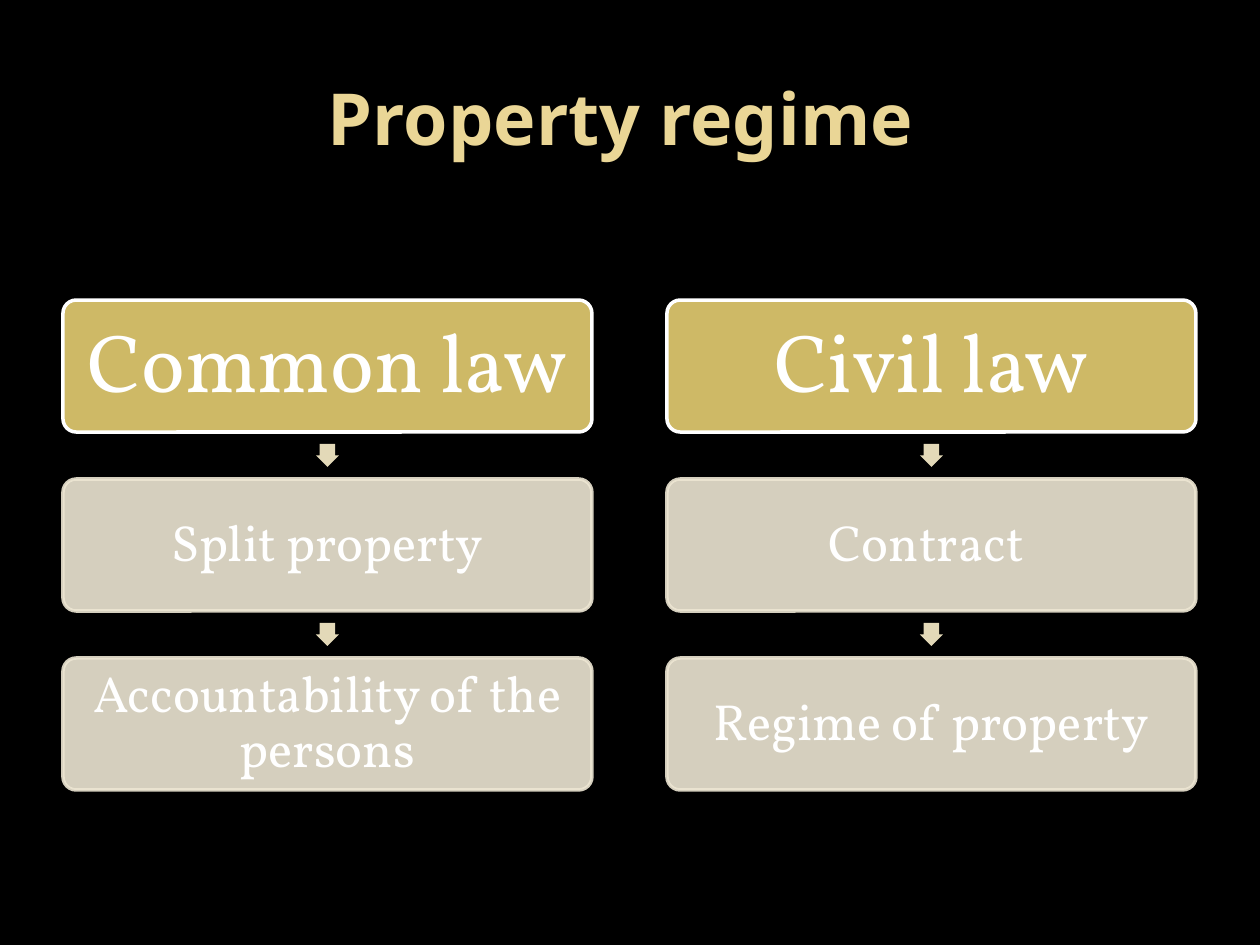
from dataclasses import dataclass

from lxml.etree import SubElement
from pptx import Presentation
from pptx.dml.color import RGBColor
from pptx.enum.shapes import MSO_SHAPE
from pptx.enum.text import MSO_ANCHOR, MSO_AUTO_SIZE, PP_ALIGN
from pptx.oxml.ns import qn
from pptx.util import Pt

# Content: each column is a heading followed by its steps
TITLE = "Property regime "  # the trailing space is part of the centred line
COLUMNS = [
    ("Common law", "Split property", "Accountability of the persons"),
    ("Civil law", "Contract ", "Regime of property"),
]


@dataclass(frozen=True)
class Theme:
    background: str = "000000"
    title: str = "EAD696"
    heading: str = "CEB966"
    step: str = "EDE6D3"
    arrow: str = "E3D9B8"
    text: str = "FFFFFF"
    title_font: str = "Noto Sans"
    body_font: str = "Vollkorn"
    title_size: int = 41
    heading_size: int = 47
    step_size: int = 29
    step_opacity: int = 90


THEME = Theme()

# Layout in px
SCALE = 914400 // 126
SLIDE_W, SLIDE_H = 1260, 945
TITLE_BOX = (63, 38, 1134, 158)
LEFT, TOP = 63, 300
BOX_W, BOX_H = 529, 132
COLUMN_PITCH, ROW_PITCH = 604, 179
ARROW = 23
HEADING_INSET, STEP_INSET = 13, 9


def px(*lengths):
    return [length * SCALE for length in lengths]


def paint(color_format, color, opacity=100):
    color_format.solid()
    color_format.fore_color.rgb = RGBColor.from_string(color)
    if opacity < 100:
        rgb = color_format._xPr.find(qn("a:solidFill")).find(qn("a:srgbClr"))
        SubElement(rgb, qn("a:alpha"), val=str(opacity * 1000))


def write(frame, text, font, size, color, bold=False):
    frame.text = text
    frame.word_wrap = True
    frame.auto_size = MSO_AUTO_SIZE.NONE
    frame.vertical_anchor = MSO_ANCHOR.MIDDLE
    paragraph = frame.paragraphs[0]
    paragraph.alignment = PP_ALIGN.CENTER
    paragraph.font.name = font
    paragraph.font.size = Pt(size)
    paragraph.font.bold = bold
    paragraph.font.color.rgb = RGBColor.from_string(color)
    return paragraph


def add_box(slide, left, top, text, is_heading):
    box = slide.shapes.add_shape(
        MSO_SHAPE.ROUNDED_RECTANGLE, *px(left, top, BOX_W, BOX_H))
    box.shadow.inherit = False
    box.adjustments[0] = 0.1
    box.line.width = Pt(2)
    if is_heading:
        paint(box.fill, THEME.heading)
        paint(box.line.fill, THEME.text)
        size, inset = THEME.heading_size, HEADING_INSET
    else:
        paint(box.fill, THEME.step, THEME.step_opacity)
        paint(box.line.fill, THEME.step, THEME.step_opacity)
        size, inset = THEME.step_size, STEP_INSET
    frame = box.text_frame
    frame.margin_left = frame.margin_right = inset * SCALE
    frame.margin_top = frame.margin_bottom = inset * SCALE
    paragraph = write(frame, text, THEME.body_font, size, THEME.text)
    paragraph.line_spacing = 0.9


def add_arrow(slide, box_left, box_top):
    """Centre a small arrow in the gap above a box."""
    gap = ROW_PITCH - BOX_H
    left = box_left + (BOX_W - ARROW) // 2
    top = box_top - (gap + ARROW) // 2
    arrow = slide.shapes.add_shape(
        MSO_SHAPE.DOWN_ARROW, *px(left, top, ARROW, ARROW))
    arrow.shadow.inherit = False
    arrow.adjustments[0] = 0.67
    arrow.adjustments[1] = 0.5
    paint(arrow.fill, THEME.arrow)
    arrow.line.fill.background()


def main():
    presentation = Presentation()
    presentation.slide_width, presentation.slide_height = px(SLIDE_W, SLIDE_H)
    slide = presentation.slides.add_slide(presentation.slide_layouts[5])
    paint(slide.background.fill, THEME.background)

    # Title
    title = slide.shapes.title
    title.left, title.top, title.width, title.height = px(*TITLE_BOX)
    write(title.text_frame, TITLE, THEME.title_font, THEME.title_size,
          THEME.title, bold=True)

    # Two columns of linked boxes
    for column, entries in enumerate(COLUMNS):
        left = LEFT + column * COLUMN_PITCH
        for row, entry in enumerate(entries):
            top = TOP + row * ROW_PITCH
            if row:
                add_arrow(slide, left, top)
            add_box(slide, left, top, entry, is_heading=row == 0)

    presentation.save("out.pptx")


if __name__ == "__main__":
    main()
